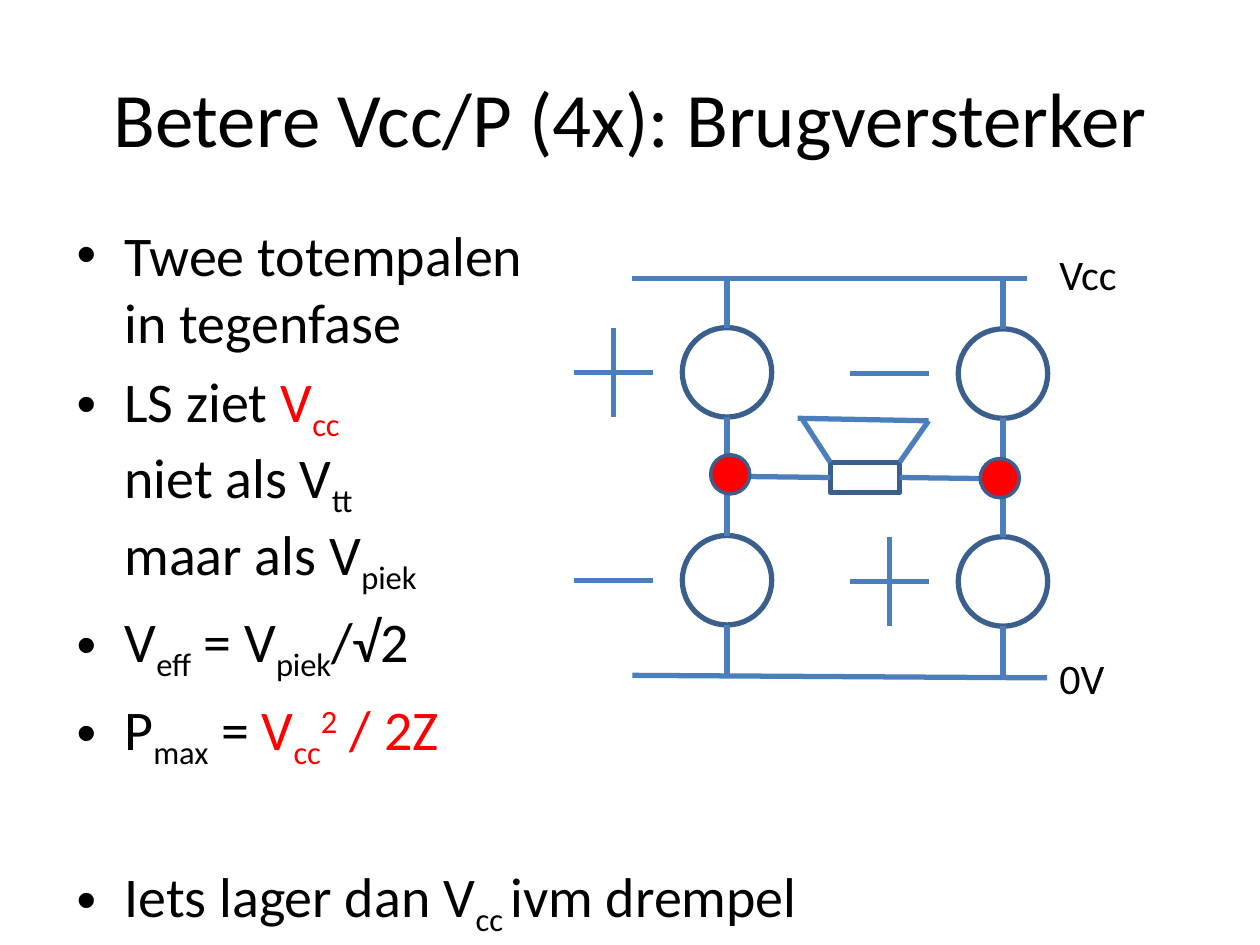
"""Build the bridge amplifier slide: bulleted formulas beside a circuit diagram."""
from dataclasses import dataclass
from typing import NamedTuple

from lxml import etree
from pptx import Presentation
from pptx import util as u
from pptx.dml.color import RGBColor
from pptx.enum import shapes, text
from pptx.oxml import ns


@dataclass(frozen=True)
class Theme:
    font: str = "Calibri"
    black: str = "000000"
    red: str = "FF0000"
    wire: str = "4B7EBC"
    outline: str = "3A5F8C"
    title: int = 44
    body: int = 32
    label: int = 24
    stroke: int = 3
    dot_stroke: int = 2


class Run(NamedTuple):
    text: str
    base: int = 0
    color: str = "000000"


class Bullet(NamedTuple):
    runs: list[Run]
    before: float = 6.4


class Branch(NamedTuple):
    x: float
    top: float
    plus_row: int


class Label(NamedTuple):
    text: str
    y: float


T = Theme()
SUB, SUP = -25, 30
DIAMETER, ROW_STEP, STUB = 0.71, 1.65, 0.39
SIGN_DX, SIGN_WIDTH = 0.9, 0.63
BULLETS = [
    Bullet([Run("Twee totempalen \n"), Run("in tegenfase")]),
    Bullet([Run("LS ziet "), Run("V", 0, T.red), Run("cc \n", SUB, T.red),
            Run("niet als V"), Run("tt \n", SUB), Run("maar als V"), Run("piek", SUB)]),
    Bullet([Run("V"), Run("eff", SUB), Run(" = V"), Run("piek", SUB), Run("/√2")]),
    Bullet([Run("P"), Run("max", SUB), Run(" = "), Run("V", 0, T.red),
            Run("cc", SUB, T.red), Run("2", SUP, T.red), Run(" / 2Z", 0, T.red)]),
    Bullet([Run("Iets lager dan V"), Run("cc ", SUB), Run("ivm drempel")], 52),
]
BRANCHES = [Branch(5.77, 2.21, 0), Branch(7.96, 2.22, 1)]
RAILS = [(5.02, 2.21, 8.15, 2.21), (5.02, 5.36, 8.31, 5.38)]
CONE = [(6.37, 3.33, 6.59, 3.67), (6.33, 3.32, 7.37, 3.34), (7.37, 3.34, 7.14, 3.67)]
DOTS = [(5.64, 3.61), (7.78, 3.64)]
LABELS = [Label("Vcc", 1.92), Label("0V", 5.13)]


def add_run(p, run: Run, size: int) -> None:
    r = p.add_run()
    r.text = run.text.rstrip("\n")
    for name, value in {"name": T.font, "size": u.Pt(size)}.items():
        setattr(r.font, name, value)
    r.font.color.rgb = RGBColor.from_string(run.color)
    if run.base:
        r.font._element.set("baseline", str(run.base * 1000))
    if run.text.endswith("\n"):
        p.add_line_break()


def add_text_frame(s, x: float, y: float, w: float, h: float, **formats):
    tf = s.shapes.add_textbox(*map(u.Inches, (x, y, w, h))).text_frame
    for name, value in {"word_wrap": True, **formats}.items():
        setattr(tf, name, value)
    return tf


def add_bullets(s, bullets: list[Bullet]) -> None:
    tf = add_text_frame(s, 0.51, 1.7, 7.64, 5.59)
    for i, bullet in enumerate(bullets):
        p = tf.paragraphs[0] if i == 0 else tf.add_paragraph()
        p.space_before = u.Pt(bullet.before)
        pr = p._p.get_or_add_pPr()
        pr.set("marL", str(u.Inches(0.38)))
        pr.set("indent", str(u.Inches(-0.38)))
        etree.SubElement(pr, ns.qn("a:buFont")).set("typeface", "Arial")
        etree.SubElement(pr, ns.qn("a:buChar")).set("char", "•")
        for run in bullet.runs:
            add_run(p, run, T.body)


def set_line(line, color: str, width: int) -> None:
    line.color.rgb = RGBColor.from_string(color)
    line.width = u.Pt(width)


def add_wire(s, x1: float, y1: float, x2: float, y2: float):
    wire = s.shapes.add_connector(
        shapes.MSO_CONNECTOR.STRAIGHT, *map(u.Inches, (x1, y1, x2, y2)))
    set_line(wire.line, T.wire, T.stroke)
    etree.SubElement(wire._element.spPr, ns.qn("a:effectLst"))
    return wire


def add_part(s, kind, x: float, y: float, w: float, h: float,
             fill: str | None = None, stroke: int = T.stroke):
    sp = s.shapes.add_shape(kind, *map(u.Inches, (x, y, w, h)))
    sp.shadow.inherit = False
    if fill:
        sp.fill.solid()
        sp.fill.fore_color.rgb = RGBColor.from_string(fill)
    else:
        sp.fill.background()
    set_line(sp.line, T.outline, stroke)
    return sp


def add_branch(s, branch: Branch) -> None:
    x, first = branch.x, branch.top + STUB
    sign_x = x - SIGN_DX
    for row in range(2):
        y = first + row * ROW_STEP
        middle = y + DIAMETER / 2
        add_part(s, shapes.MSO_SHAPE.OVAL, x - DIAMETER / 2, y, DIAMETER, DIAMETER)
        add_wire(s, sign_x - SIGN_WIDTH / 2, middle, sign_x + SIGN_WIDTH / 2, middle)
        if row == branch.plus_row:
            add_wire(s, sign_x, y, sign_x, y + DIAMETER)
    second = first + ROW_STEP
    add_wire(s, x, branch.top, x, first)
    add_wire(s, x, first + DIAMETER, x, second)
    add_wire(s, x, second + DIAMETER, x, second + DIAMETER + STUB)


def add_speaker(s) -> None:
    box = add_part(s, shapes.MSO_SHAPE.RECTANGLE, 6.59, 3.67, 0.55, 0.24)
    add_wire(s, 5.77, 3.78, 6.59, 3.79).end_connect(box, 1)
    add_wire(s, 7.14, 3.79, 7.96, 3.8).begin_connect(box, 3)
    for edge in CONE:
        add_wire(s, *edge)


def main() -> None:
    prs = Presentation()
    prs.slide_width, prs.slide_height = u.Inches(10), u.Inches(7.5)
    s = prs.slides.add_slide(prs.slide_layouts[6])
    tf = add_text_frame(s, 0.2, 0.3, 9.61, 1.25,
                        vertical_anchor=text.MSO_ANCHOR.MIDDLE)
    p = tf.paragraphs[0]
    p.alignment = text.PP_ALIGN.CENTER
    add_run(p, Run("Betere Vcc/P (4x): Brugversterker"), T.title)
    add_bullets(s, BULLETS)
    for rail in RAILS:
        add_wire(s, *rail)
    for branch in BRANCHES:
        add_branch(s, branch)
    add_speaker(s)
    for x, y in DOTS:
        add_part(s, shapes.MSO_SHAPE.OVAL, x, y, 0.31, 0.31, T.red, T.dot_stroke)
    for label in LABELS:
        tf = add_text_frame(s, 8.31, label.y, 0.79, 0.5)
        add_run(tf.paragraphs[0], Run(label.text), T.label)
    prs.save("out.pptx")


if __name__ == "__main__":
    main()
